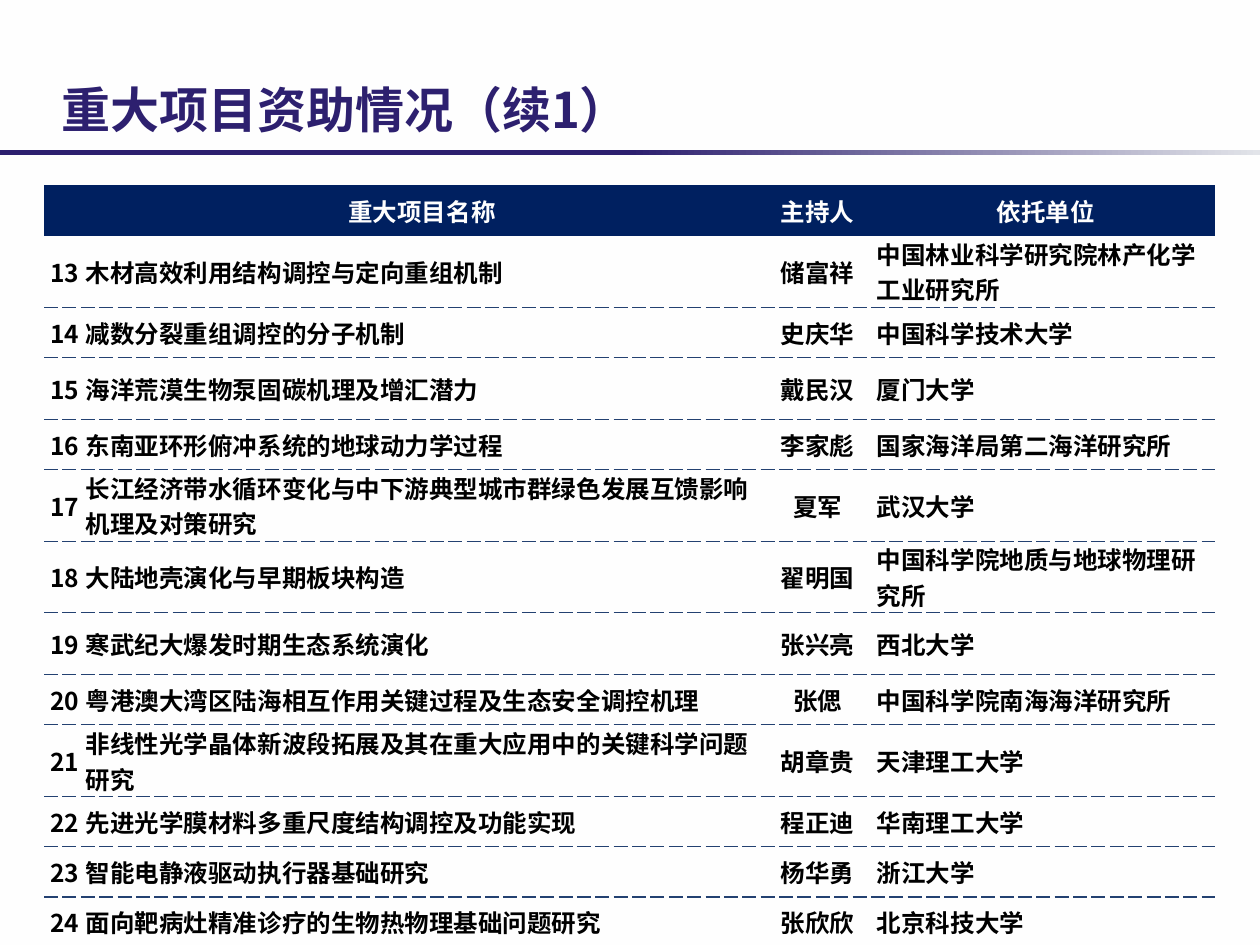
import dataclasses

import lxml.etree
import pptx
import pptx.dml.color
import pptx.enum.dml
import pptx.enum.shapes
import pptx.enum.text
import pptx.oxml
import pptx.oxml.ns
import pptx.util

Inches = pptx.util.Inches
Pt = pptx.util.Pt
Align = pptx.enum.text.PP_ALIGN
Anchor = pptx.enum.text.MSO_ANCHOR
qn = pptx.oxml.ns.qn


@dataclasses.dataclass(frozen=True)
class Theme:
    font: str = "Noto Sans CJK SC"
    back: str = "FEFEFE"
    title: str = "2D206F"
    fade: str = "E2E4E9"
    head: str = "002060"
    text: str = "000000"
    rule: str = "234171"
    big: int = 28
    small: int = 14
    line: float = 0.75


HEADS = ("", "重大项目名称", "主持人", "依托单位")
FIRST = 13
GRANTS = (
    ("木材高效利用结构调控与定向重组机制", "储富祥", "中国林业科学研究院林产化学工业研究所"),
    ("减数分裂重组调控的分子机制", "史庆华", "中国科学技术大学"),
    ("海洋荒漠生物泵固碳机理及增汇潜力", "戴民汉", "厦门大学"),
    ("东南亚环形俯冲系统的地球动力学过程", "李家彪", "国家海洋局第二海洋研究所"),
    ("长江经济带水循环变化与中下游典型城市群绿色发展互馈影响机理及对策研究", "夏军", "武汉大学"),
    ("大陆地壳演化与早期板块构造", "翟明国", "中国科学院地质与地球物理研究所"),
    ("寒武纪大爆发时期生态系统演化", "张兴亮", "西北大学"),
    ("粤港澳大湾区陆海相互作用关键过程及生态安全调控机理", "张偲", "中国科学院南海海洋研究所"),
    ("非线性光学晶体新波段拓展及其在重大应用中的关键科学问题研究", "胡章贵", "天津理工大学"),
    ("先进光学膜材料多重尺度结构调控及功能实现", "程正迪", "华南理工大学"),
    ("智能电静液驱动执行器基础研究", "杨华勇", "浙江大学"),
    ("面向靶病灶精准诊疗的生物热物理基础问题研究", "张欣欣", "北京科技大学"),
)
WIDTHS = (0.33, 5.34, 0.94, 2.68)
ALIGNS = (Align.CENTER, Align.LEFT, Align.CENTER, Align.LEFT)
ROW = 0.4
TALL = {3: 0.49, 7: 0.49}


def color(code):
    return pptx.dml.color.RGBColor.from_string(code)


class Deck:
    def __init__(self, theme):
        self.theme = theme
        self.show = pptx.Presentation()
        self.show.slide_width = Inches(10)
        self.show.slide_height = Inches(7.5)
        self.slide = self.show.slides.add_slide(self.show.slide_layouts[5])
        fill = self.slide.background.fill
        fill.solid()
        fill.fore_color.rgb = color(theme.back)

    def style(self, para, size, code):
        for run in para.runs:
            run.font.size = Pt(size)
            run.font.bold = True
            run.font.name = self.theme.font
            run.font.color.rgb = color(code)
            face = lxml.etree.Element(qn("a:ea"), typeface=self.theme.font)
            run.font._element.find(qn("a:latin")).addnext(face)

    def title(self, text, left, top, width, height):
        shape = self.slide.shapes.title
        shape.left, shape.top = Inches(left), Inches(top)
        shape.width, shape.height = Inches(width), Inches(height)
        frame = shape.text_frame
        frame.text = text
        frame.word_wrap = True
        frame.auto_size = pptx.enum.text.MSO_AUTO_SIZE.NONE
        frame.vertical_anchor = Anchor.BOTTOM
        frame.margin_left = frame.margin_right = Inches(0.06)
        frame.margin_top = frame.margin_bottom = 0
        para = frame.paragraphs[0]
        para.alignment = Align.LEFT
        para.line_spacing = 1.1
        para.space_before = 0
        para.space_after = Pt(1)
        self.style(para, self.theme.big, self.theme.title)

    def band(self, left, top, width, height):
        shape = self.slide.shapes.add_shape(
            pptx.enum.shapes.MSO_SHAPE.RECTANGLE,
            Inches(left), Inches(top), Inches(width), Inches(height))
        shape.shadow.inherit = False
        shape.line.fill.background()
        shape.fill.gradient()
        shape.fill.gradient_angle = 0
        stops = zip(shape.fill.gradient_stops, (0.5, 1),
                    (self.theme.title, self.theme.fade))
        for stop, place, code in stops:
            stop.position = place
            stop.color.rgb = color(code)

    def border(self, cell, dashed):
        props = cell._tc.get_or_add_tcPr()
        for index, side in enumerate(("lnL", "lnR", "lnT", "lnB")):
            line = lxml.etree.Element(qn("a:" + side))
            if side in dashed:
                line.set("w", str(Pt(self.theme.line)))
                fill = lxml.etree.SubElement(line, qn("a:solidFill"))
                lxml.etree.SubElement(fill, qn("a:srgbClr"), val=self.theme.rule)
                lxml.etree.SubElement(line, qn("a:prstDash"), val="sysDash")
            else:
                lxml.etree.SubElement(line, qn("a:noFill"))
            props.insert(index, line)

    def cell(self, cell, text, align, row):
        head = row == 0
        cell.text = text
        cell.vertical_anchor = Anchor.MIDDLE
        edge = Inches(0.01) if head else 0
        cell.margin_left = cell.margin_right = cell.margin_top = edge
        cell.margin_bottom = 0
        para = cell.text_frame.paragraphs[0]
        para.alignment = Align.CENTER if head else align
        self.style(para, self.theme.small,
                   self.theme.back if head else self.theme.text)
        if head:
            cell.fill.solid()
            cell.fill.fore_color.rgb = color(self.theme.head)
            self.border(cell, ())
        else:
            cell.fill.background()
            self.border(cell, ("lnB",) if row == 1 else ("lnT", "lnB"))

    def table(self, rows, left, top):
        sizes = [TALL.get(index, ROW) for index in range(len(rows))]
        table = self.slide.shapes.add_table(
            len(rows), len(WIDTHS), Inches(left), Inches(top),
            Inches(sum(WIDTHS)), Inches(sum(sizes))).table
        table.first_row = table.horz_banding = False
        for column, width in zip(table.columns, WIDTHS):
            column.width = Inches(width)
        for index, (row, size) in enumerate(zip(rows, sizes)):
            table.rows[index].height = Inches(size)
            for place, (text, align) in enumerate(zip(row, ALIGNS)):
                self.cell(table.cell(index, place), text, align, index)


def main():
    deck = Deck(Theme())
    deck.band(0, 1.19, 10, 0.04)
    deck.title("重大项目资助情况（续1）", 0.43, 0.13, 9.21, 0.97)
    rows = [(str(number), *grant) for number, grant in enumerate(GRANTS, FIRST)]
    deck.table([HEADS, *rows], 0.35, 1.47)
    deck.show.save("out.pptx")


if __name__ == "__main__":
    main()
